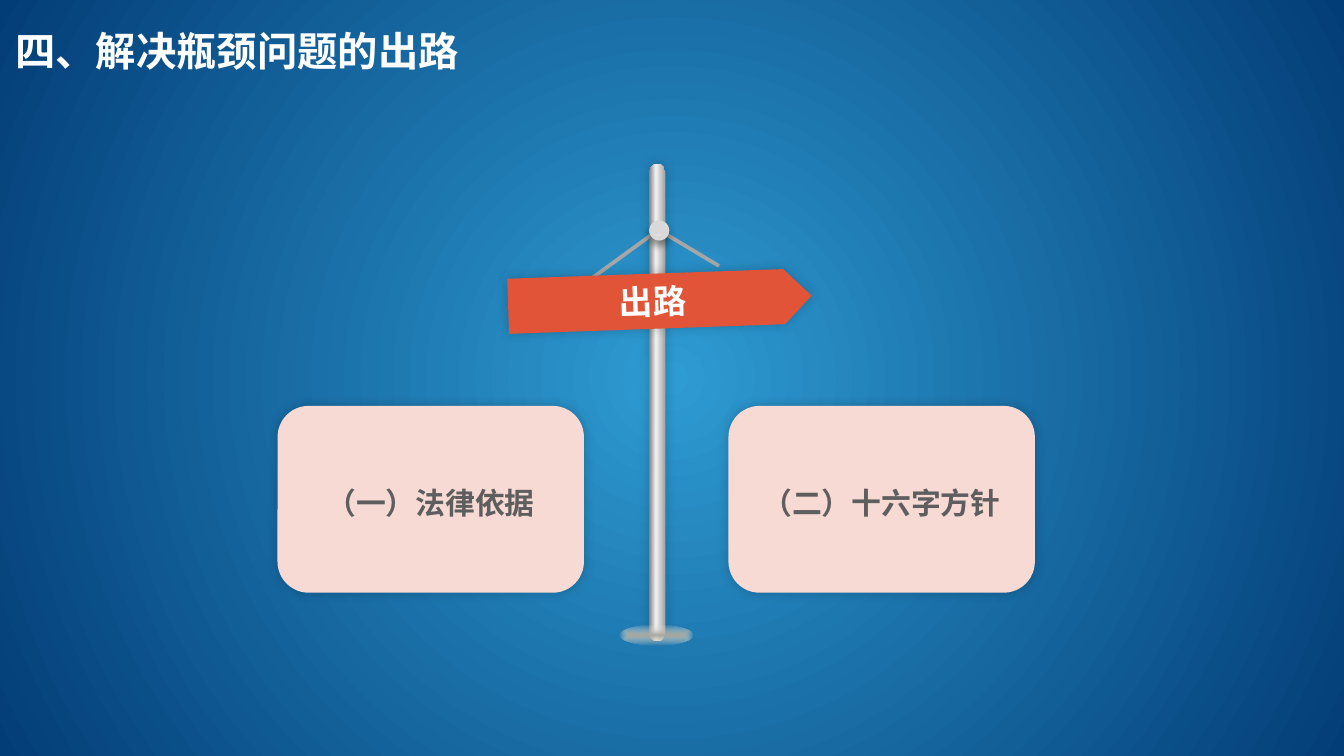
from lxml import etree
from pptx import Presentation
from pptx.dml.color import RGBColor
from pptx.enum.shapes import MSO_SHAPE
from pptx.enum.text import MSO_ANCHOR, PP_ALIGN
from pptx.oxml.ns import qn
from pptx.util import Inches, Pt

ROUNDED, OVAL, SIGN = MSO_SHAPE.ROUNDED_RECTANGLE, MSO_SHAPE.OVAL, MSO_SHAPE.PENTAGON
MIDDLE, CENTER, LEFT = MSO_ANCHOR.MIDDLE, PP_ALIGN.CENTER, PP_ALIGN.LEFT
COLUMNS = 100
CELL = Inches(10) / COLUMNS  # square grid cell
ROWS = COLUMNS * 9 / 16
CJK = "Noto Sans CJK SC"
COLORS = {
    "sky": "2E9BD2", "navy": "033D77", "white": "FFFFFF", "black": "000000",
    "steel_dark": "808080", "steel_light": "F2F2F2", "steel": "A6A6A6",
    "ground": "AAA9A1", "ground_edge": "EEECE1", "nail": "D9D9D9",
    "nail_glow": "D7D7D7", "sign": "E15438", "card": "F8DAD4", "card_text": "5E5E5E",
}
SOFT_SHADOW = (20, 6, 0, 315)
NAIL_SHADOW = (40, 4, 3, 90)


def cells(*counts):
    return [round(count * CELL) for count in counts]


def rgb(name):
    return RGBColor.from_string(COLORS[name])


def add_color(parent, name, alpha=100):
    color = etree.SubElement(parent, qn("a:srgbClr"), val=COLORS[name])
    if alpha < 100:
        etree.SubElement(color, qn("a:alpha"), val=str(alpha * 1000))


def set_gradient(properties, stops, path=None, angle=0):
    """Replace the solid fill by stops of (percent, colour, alpha)."""
    gradient = etree.Element(qn("a:gradFill"), rotWithShape="1")
    stop_list = etree.SubElement(gradient, qn("a:gsLst"))
    for percent, *color in stops:
        stop = etree.SubElement(stop_list, qn("a:gs"), pos=str(percent * 1000))
        add_color(stop, *color)
    if path:
        radial = etree.SubElement(gradient, qn("a:path"))
        radial.set("path", path)
        etree.SubElement(radial, qn("a:fillToRect"),
                         {side: "50000" for side in "ltrb"})
    else:
        etree.SubElement(gradient, qn("a:lin"), ang=str(angle * 60000), scaled="0")
    properties.replace(properties.find(qn("a:solidFill")), gradient)


def set_shadow(shape, alpha, blur, distance, direction):
    effects = shape._element.spPr.find(qn("a:effectLst"))
    shadow = etree.SubElement(
        effects, qn("a:outerShdw"), blurRad=str(Pt(blur)), dist=str(Pt(distance)),
        dir=str(direction * 60000), algn="ctr", rotWithShape="0")
    add_color(shadow, "black", alpha)


def add_part(slide, kind, box, color="white", shadow=None, rotation=0, **gradient):
    part = slide.shapes.add_shape(kind, *cells(*box))
    part.rotation = rotation
    part.line.fill.background()
    part.fill.solid()
    part.fill.fore_color.rgb = rgb(color)
    part.shadow.inherit = False
    if gradient:
        set_gradient(part._element.spPr, **gradient)
    if shadow:
        set_shadow(part, *shadow)
    return part


def write(shape, words, size, color, font=CJK, align=CENTER, spacing=1.0):
    frame = shape.text_frame
    frame.word_wrap = True
    frame.vertical_anchor = MIDDLE
    paragraph = frame.paragraphs[0]
    paragraph.alignment = align
    paragraph.line_spacing = spacing
    run = paragraph.add_run()
    run.text = words
    run.font.size = Pt(size)
    run.font.bold = True
    run.font.name = font
    run.font.color.rgb = rgb(color)
    etree.SubElement(run._r.get_or_add_rPr(), qn("a:ea"), typeface=CJK)


def add_background(slide):
    slide.background.fill.solid()
    set_gradient(slide._element.find(".//" + qn("p:bgPr")),
                 [(0, "sky"), (100, "navy")], path="circle")


def add_title(slide, words):
    title = slide.shapes.add_textbox(*cells(0.15, 0.5, 93, 6.5))
    write(title, words, 21.6, "white", font="Arial", align=LEFT)


def add_pole(slide):
    pole = add_part(slide, ROUNDED, (48.3, 12.2, 1.2, 35.5), shadow=SOFT_SHADOW,
                    stops=[(0, "steel_dark"), (42, "steel_light"), (98, "steel")])
    pole.adjustments[0] = 0.5
    add_part(slide, OVAL, (46.1, 46.5, 5.5, 1.5), path="shape",
             stops=[(0, "ground"), (100, "ground_edge", 0)])


def add_string(slide):
    start, *others = [cells(*point) for point in ((43.5, 21.1), (49, 17.1), (53.5, 19.8))]
    builder = slide.shapes.build_freeform(*start)
    builder.add_line_segments(others, close=False)
    string = builder.convert_to_shape()
    string.fill.background()
    string.line.color.rgb = rgb("steel")
    string.line.width = Pt(2)
    string.shadow.inherit = False


def add_nail(slide):
    add_part(slide, OVAL, (48.3, 16.4, 1.5, 1.5), "nail", NAIL_SHADOW)
    add_part(slide, OVAL, (48.6, 17.4, 0.7, 0.2), rotation=356.5, path="shape",
             stops=[(0, "white", 55), (50, "nail_glow", 12), (100, "white", 0)])
    add_part(slide, OVAL, (48.8, 16.6, 0.6, 0.4), rotation=49.3, angle=45,
             stops=[(0, "white", 0), (16, "white", 51), (30, "white", 0)])


def add_sign(slide, words):
    sign = add_part(slide, SIGN, (37.8, 20.35, 22.6, 4.1), "sign", SOFT_SHADOW, 358)
    write(sign, words, 18, "white")


def add_cards(slide, labels):
    first_left, pitch = 20.65, 33.55
    for index, (words, font) in enumerate(labels):
        box = (first_left + index * pitch, 30.2, 22.8, 13.9)
        card = add_part(slide, ROUNDED, box, "card", SOFT_SHADOW)
        write(card, words, 16, "card_text", font, spacing=1.2)


def main():
    deck = Presentation()
    deck.slide_width, deck.slide_height = cells(COLUMNS, ROWS)
    slide = deck.slides.add_slide(deck.slide_layouts[6])
    add_background(slide)
    add_pole(slide)
    add_string(slide)
    add_nail(slide)
    add_sign(slide, "出路")
    add_cards(slide, [("（一）法律依据", "Arial"), ("（二）十六字方针", CJK)])
    add_title(slide, "四、解决瓶颈问题的出路")
    deck.save("out.pptx")


if __name__ == "__main__":
    main()
